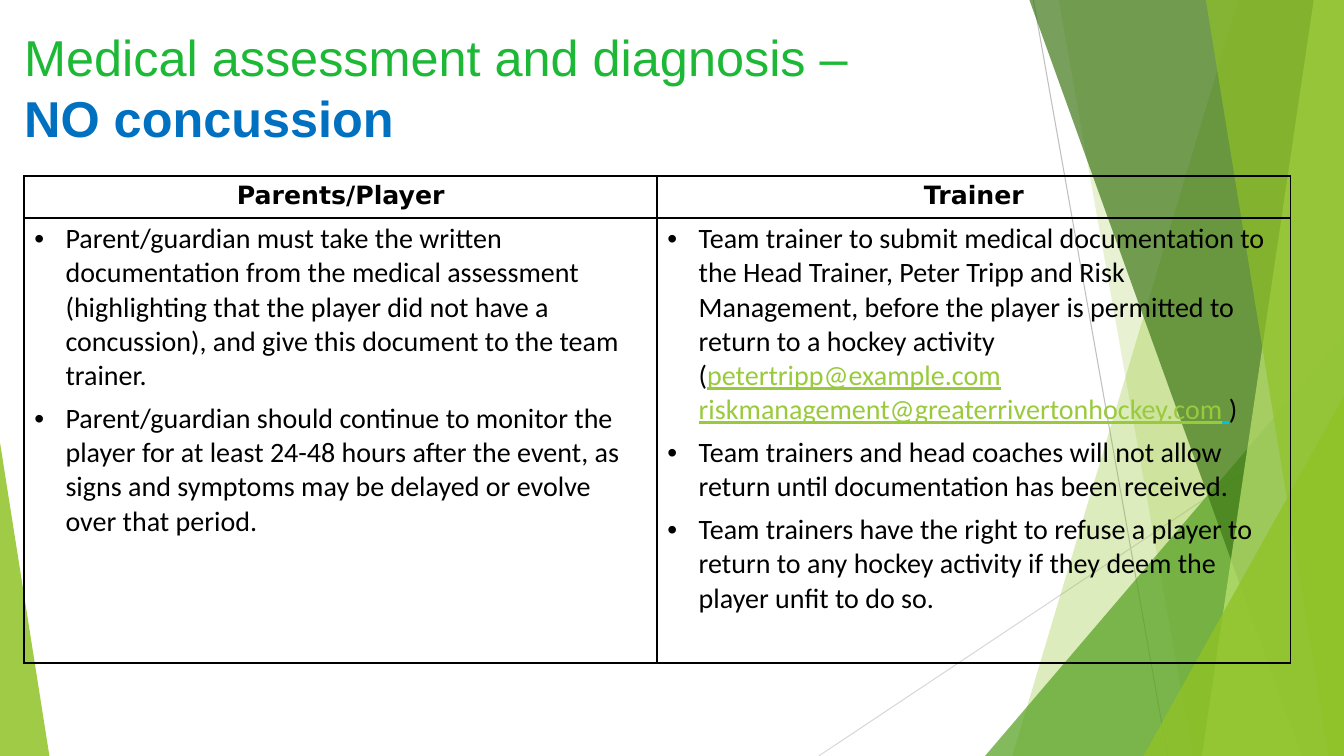
from lxml.etree import SubElement
from pptx import Presentation
from pptx.dml.color import RGBColor
from pptx.enum.shapes import MSO_CONNECTOR, MSO_SHAPE
from pptx.enum.text import MSO_ANCHOR, MSO_AUTO_SIZE, PP_ALIGN
from pptx.oxml import parse_xml
from pptx.oxml.ns import nsdecls, qn
from pptx.util import Inches, Pt

BLACK = RGBColor(0x00, 0x00, 0x00)
TITLE_GREEN = RGBColor(0x1D, 0xB8, 0x36)
TITLE_BLUE = RGBColor(0x00, 0x70, 0xC0)
ADDRESS_GREEN = RGBColor(0x99, 0xCA, 0x3C)
ADDRESS_GAP = RGBColor(0x00, 0xC2, 0xE2)
LEAF = RGBColor(0x90, 0xC2, 0x26)
MID_GREEN = RGBColor(0x54, 0xA0, 0x21)
DARK_GREEN = RGBColor(0x3F, 0x78, 0x18)
PALE_GREEN = RGBColor(0xBF, 0xE4, 0x71)
GREY = RGBColor(0xBF, 0xBF, 0xBF)
LIGHT_GREY = RGBColor(0xD8, 0xD8, 0xD8)

WIDTH, HEIGHT = 13.33, 7.5

PARENT_STEPS = [
    "Parent/guardian must take the written documentation from the medical "
    "assessment (highlighting that the player did not have a concussion), "
    "and give this document to the team trainer.",
    "Parent/guardian should continue to monitor the player for at least "
    "24-48 hours after the event, as signs and symptoms may be delayed or "
    "evolve over that period.",
]
# A step is plain text or a list of (text, colour, underlined) pieces.
TRAINER_STEPS = [
    [("Team trainer to submit medical documentation to the Head Trainer, "
      "Peter Tripp and Risk Management, before the player is permitted to "
      "return to a hockey activity (", BLACK, False),
     ("petertripp@example.com", ADDRESS_GREEN, True),
     (" ", ADDRESS_GAP, True),
     ("riskmanagement@greaterrivertonhockey.com", ADDRESS_GREEN, True),
     (" ", ADDRESS_GAP, True),
     (")", BLACK, False)],
    "Team trainers and head coaches will not allow return until "
    "documentation has been received.",
    "Team trainers have the right to refuse a player to return to any hockey "
    "activity if they deem the player unfit to do so.",
]


def paint(shape, color, opacity):
    """Fill without outline or shadow; opacity is in percent."""
    shape.shadow.inherit = False
    shape.fill.solid()
    shape.fill.fore_color.rgb = color
    shape.line.fill.background()
    srgb = shape.fill._xPr.find(qn("a:solidFill"))[0]
    SubElement(srgb, qn("a:alpha"), val=str(opacity * 1000))


def add_hairline(slide, start, end, color):
    hairline = slide.shapes.add_connector(
        MSO_CONNECTOR.STRAIGHT, *map(Inches, start + end))
    hairline.line.color.rgb = color
    hairline.line.width = Pt(0.75)
    SubElement(hairline._element.spPr, qn("a:effectLst"))


def add_band(slide, top_x, bottom_x, color, opacity):
    """Full-height band from a slanted left edge to the right slide edge."""
    corners = [(Inches(x), Inches(y)) for x, y in
               [(top_x, 0), (WIDTH, 0), (WIDTH, HEIGHT), (bottom_x, HEIGHT)]]
    outline = slide.shapes.build_freeform(*corners[0])
    outline.add_line_segments(corners[1:], close=True)
    paint(outline.convert_to_shape(), color, opacity)


def add_corner(slide, left, width, height, apex, color, opacity):
    """Triangle standing on the bottom edge; apex 0 is left, 1 is right."""
    corner = slide.shapes.add_shape(
        MSO_SHAPE.ISOSCELES_TRIANGLE, Inches(left), Inches(HEIGHT - height),
        Inches(width), Inches(height))
    corner.adjustments[0] = apex
    paint(corner, color, opacity)


def add_backdrop(slide):
    add_hairline(slide, (10.25, 0), (11.58, HEIGHT), GREY)
    add_hairline(slide, (WIDTH, 4.03), (8.12, HEIGHT), LIGHT_GREY)
    add_band(slide, 12.28, 10.04, LEAF, 30)
    add_band(slide, 10.5, 11.83, LEAF, 20)
    add_corner(slide, 9.77, 3.56, 4.17, 1, MID_GREEN, 72)
    add_band(slide, 10.21, 12.91, DARK_GREEN, 70)
    add_band(slide, 13.03, 11.92, PALE_GREEN, 70)
    add_band(slide, 11.96, 13.18, LEAF, 65)
    add_corner(slide, 11.34, 1.99, 3.57, 1, LEAF, 80)
    add_corner(slide, 0, 0.49, 3.11, 0, LEAF, 85)


def place_title(slide, left, top, width, height):
    title = slide.shapes.title
    title.left, title.top, title.width, title.height = map(
        Inches, (left, top, width, height))
    frame = title.text_frame
    frame.auto_size = MSO_AUTO_SIZE.NONE
    frame.word_wrap = True
    frame.vertical_anchor = MSO_ANCHOR.TOP
    frame.margin_left = frame.margin_right = frame.margin_bottom = 0
    frame.margin_top = Inches(0.01)
    heading = frame.paragraphs[0]
    heading.alignment = PP_ALIGN.LEFT
    heading.font.name = "Arial"
    heading.font.size = Pt(36)
    subject = heading.add_run()
    subject.text = "Medical assessment and diagnosis –"
    subject.font.color.rgb = TITLE_GREEN
    heading.add_line_break()
    outcome = heading.add_run()
    outcome.text = "NO concussion"
    outcome.font.bold = True
    outcome.font.color.rgb = TITLE_BLUE


def format_cell(cell, top_margin):
    cell.margin_left = cell.margin_bottom = 0
    cell.margin_right = Inches(0.1)
    cell.margin_top = Inches(top_margin)
    cell.fill.background()
    for place, side in enumerate(("lnL", "lnR", "lnT", "lnB")):
        cell._tc.tcPr.insert(place, parse_xml(
            f'<a:{side} {nsdecls("a")} w="{Pt(1.5)}"><a:solidFill>'
            f'<a:srgbClr val="{BLACK}"/></a:solidFill></a:{side}>'))


def write_header(cell, heading):
    format_cell(cell, 0.05)
    cell.margin_right = 0
    paragraph = cell.text_frame.paragraphs[0]
    paragraph.text = heading
    paragraph.alignment = PP_ALIGN.CENTER
    paragraph.font.name = "DejaVu Sans"
    paragraph.font.size = Pt(18)
    paragraph.font.bold = True
    paragraph.font.color.rgb = BLACK


def add_bullet(paragraph):
    properties = paragraph._p.get_or_add_pPr()
    properties.set("marL", str(Inches(0.41)))
    properties.set("indent", str(Inches(-0.31)))
    bullet_color = SubElement(properties, qn("a:buClr"))
    SubElement(bullet_color, qn("a:srgbClr"), val=str(BLACK))
    SubElement(properties, qn("a:buFont"), typeface="Arial")
    SubElement(properties, qn("a:buChar"), char="•")


def write_steps(cell, steps):
    format_cell(cell, 0.04)
    frame = cell.text_frame
    for number, step in enumerate(steps):
        paragraph = frame.add_paragraph() if number else frame.paragraphs[0]
        if number:
            paragraph.space_before = Pt(6)
        add_bullet(paragraph)
        paragraph.font.name = "Calibri"
        paragraph.font.size = Pt(20)
        pieces = [(step, BLACK, False)] if isinstance(step, str) else step
        for text, color, underlined in pieces:
            run = paragraph.add_run()
            run.text = text
            run.font.color.rgb = color
            run.font.underline = underlined


def add_duties(slide, left, top, width, header_height, steps_height):
    columns = [("Parents/Player", PARENT_STEPS), ("Trainer", TRAINER_STEPS)]
    duties = slide.shapes.add_table(
        2, len(columns), Inches(left), Inches(top), Inches(width),
        Inches(header_height + steps_height)).table
    duties.first_row = duties.horz_banding = False
    duties.rows[0].height = Inches(header_height)
    duties.rows[1].height = Inches(steps_height)
    for index, (heading, steps) in enumerate(columns):
        write_header(duties.cell(0, index), heading)
        write_steps(duties.cell(1, index), steps)


def main():
    deck = Presentation()
    deck.slide_width, deck.slide_height = Inches(WIDTH), Inches(HEIGHT)
    slide = deck.slides.add_slide(deck.slide_layouts.get_by_name("Title Only"))
    add_backdrop(slide)
    place_title(slide, 0.24, 0.25, 10.66, 1.23)
    add_duties(slide, 0.24, 1.75, 12.56, 0.41, 4.42)
    deck.save("out.pptx")


if __name__ == "__main__":
    main()
